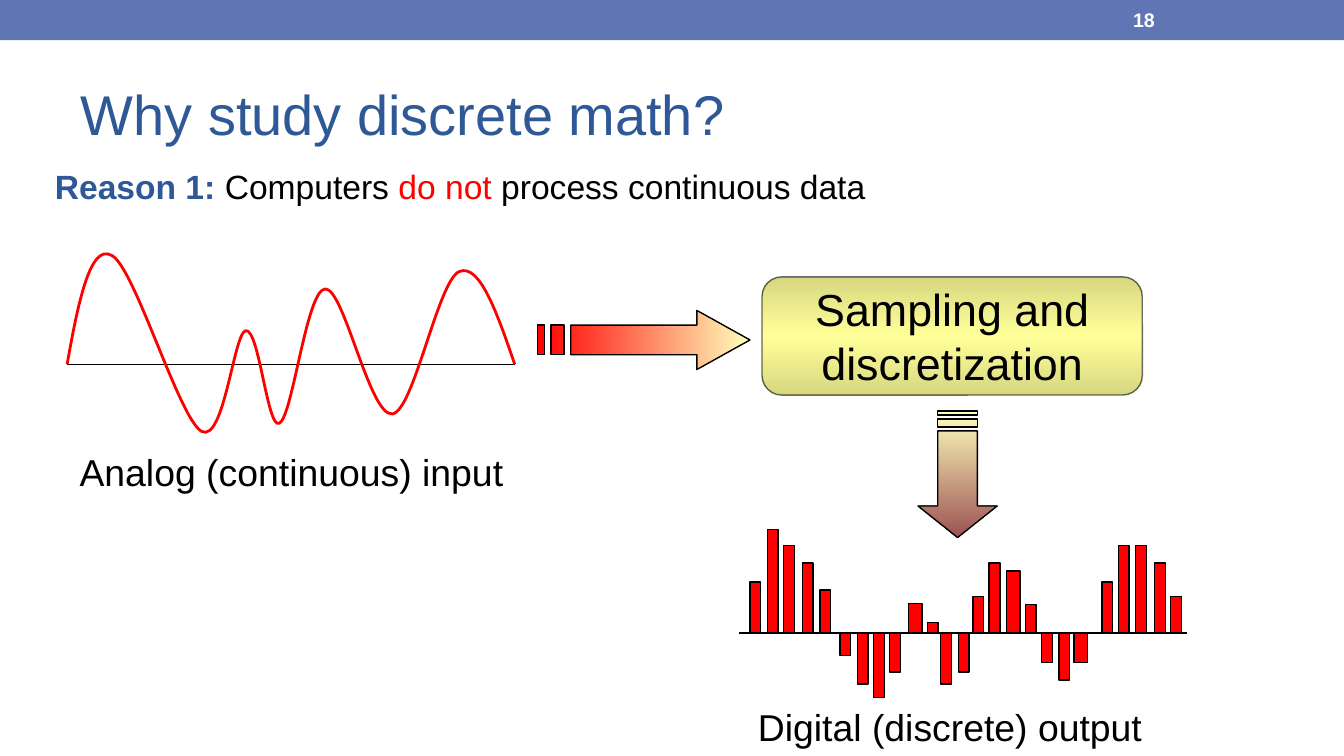
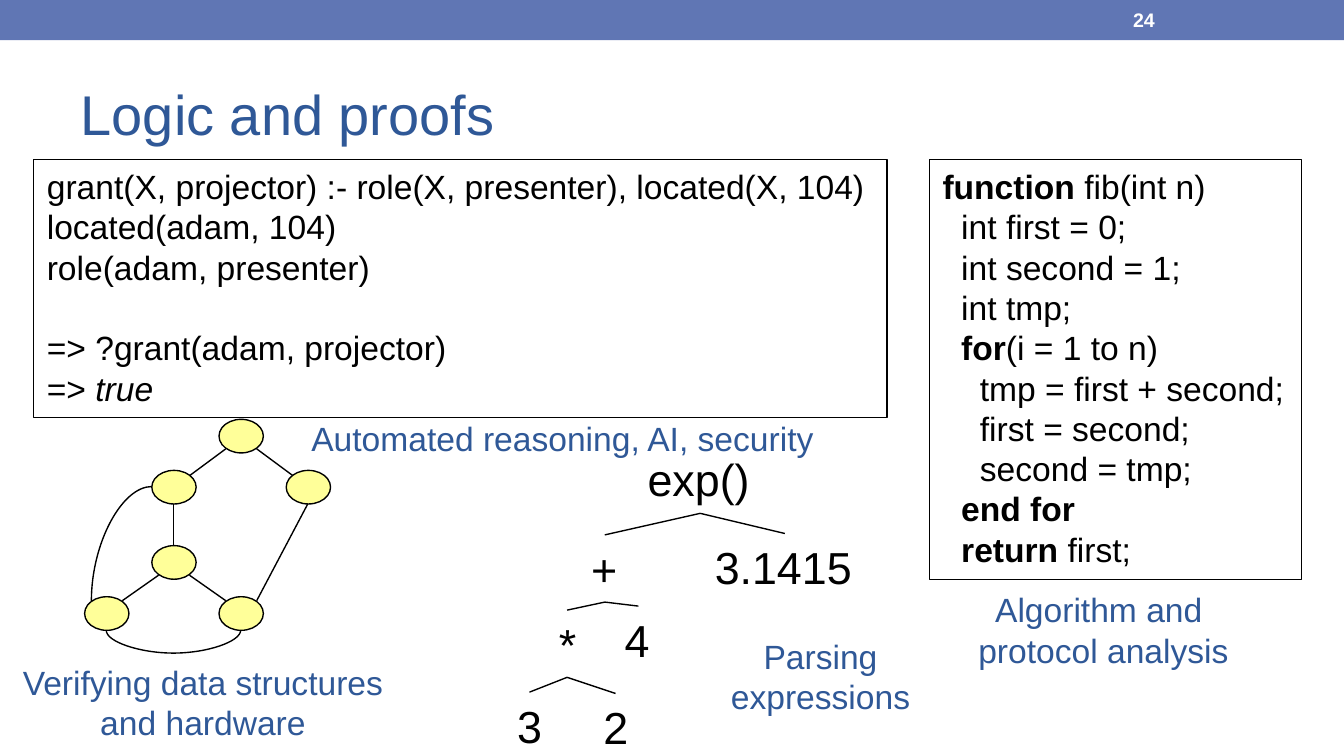
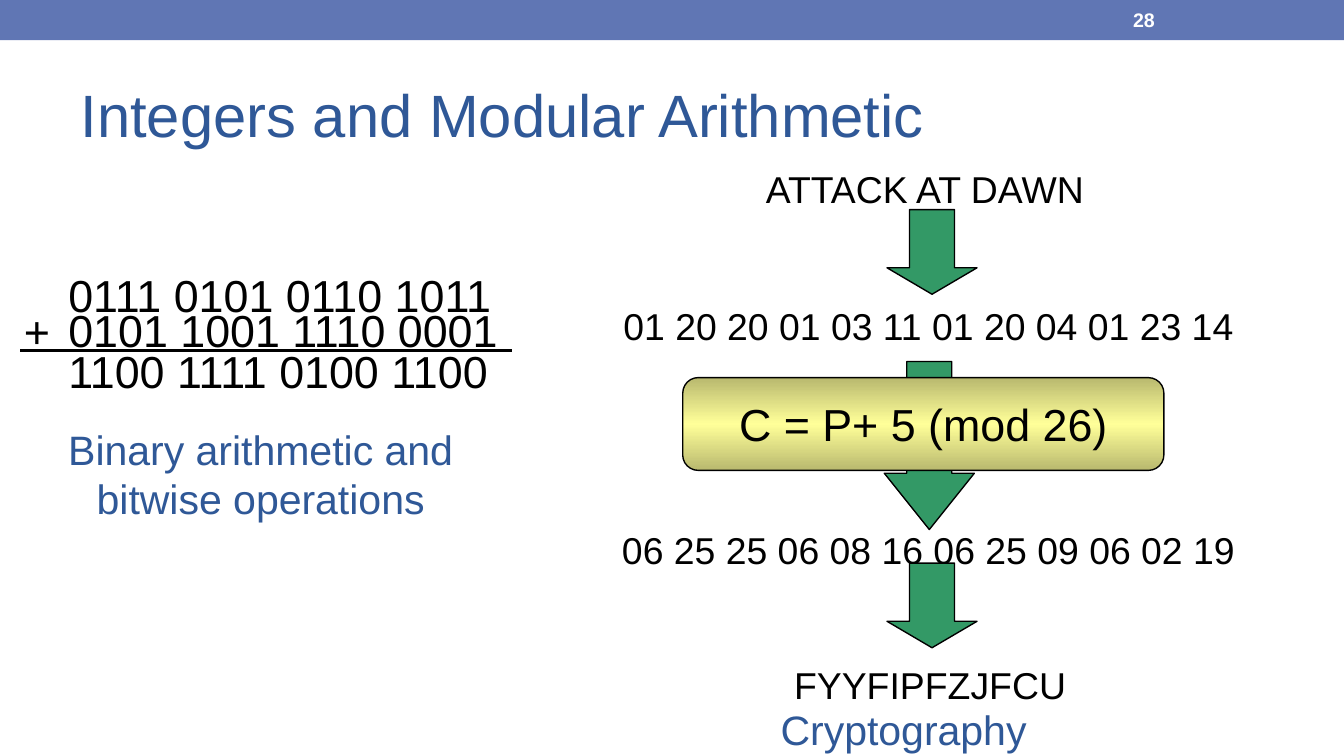
import collections

import lxml.etree
import pptx
import pptx.dml.color
import pptx.enum.shapes
import pptx.enum.text
import pptx.oxml.ns
import pptx.util

RGB = pptx.dml.color.RGBColor
SHAPES = pptx.enum.shapes.MSO_SHAPE
LINKS = pptx.enum.shapes.MSO_CONNECTOR
ALIGN = pptx.enum.text.PP_ALIGN
ANCHOR = pptx.enum.text.MSO_ANCHOR
FIT = pptx.enum.text.MSO_AUTO_SIZE
qn = pptx.oxml.ns.qn

# Shared look
BLUE = RGB(0x2F, 0x58, 0x97)
BAND = RGB(0x60, 0x76, 0xB4)
BLACK = RGB(0, 0, 0)
WHITE = RGB(255, 255, 255)
RED = RGB(255, 0, 0)
GREEN = RGB(0x33, 0x99, 0x66)
YELLOW = RGB(0xFF, 0xFF, 0x99)
CREAM = RGB(0xFF, 0xFF, 0xBD)
BROWN = RGB(0x9C, 0x52, 0x52)
OLIVE = RGB(0xD7, 0xD7, 0x81)
DARK_OLIVE = RGB(0xB9, 0xB9, 0x6F)
FONT = "Arial"
THIN = 0.75

# Square grid: ten columns or rows to the inch, on a 16:9 slide
COLUMNS, ROWS = 100, 56.25
CODE_INDENT = 1.39

Para = collections.namedtuple("Para", "spans indent first before", defaults=(0, 0, 0))


def grid(count):
    return pptx.util.Emu(round(count * pptx.util.Inches(0.1)))


def apply(target, values):
    for name, value in values.items():
        setattr(target, name, value)


# Text
def write(frame, paras, size, color=BLACK, align=ALIGN.LEFT, **frame_format):
    apply(frame, {"word_wrap": False, "vertical_anchor": ANCHOR.TOP, **frame_format})
    for number, item in enumerate(paras):
        item = item if isinstance(item, Para) else Para([item])
        para = frame.add_paragraph() if number else frame.paragraphs[0]
        apply(para, {"alignment": align, "space_before": pptx.util.Pt(item.before)})
        if item.indent:
            properties = para._p.get_or_add_pPr()
            properties.set("marL", str(grid(item.indent)))
            properties.set("indent", str(grid(item.first)))
        for part in item.spans:
            words, changes = (part, {}) if isinstance(part, str) else part
            changes = dict(changes)
            span = para.add_run()
            span.text = words
            span.font.color.rgb = changes.pop("color", color)
            apply(span.font, {"name": FONT, "size": pptx.util.Pt(size),
                              "bold": False, **changes})


def label(page, frame, paras, size, color=BLACK, align=ALIGN.LEFT, **frame_format):
    box = page.shapes.add_textbox(*map(grid, frame))
    settings = {"auto_size": FIT.SHAPE_TO_FIT_TEXT, **frame_format}
    write(box.text_frame, paras, size, color, align, **settings)


def caption(page, frame, paras, size=18):
    label(page, frame, paras, size, BLUE, ALIGN.CENTER)


# Shapes
def finish(shape, fill=None, line=BLACK, width=THIN):
    shape.shadow.inherit = False
    if fill is None:
        shape.fill.background()
    else:
        shape.fill.solid()
        shape.fill.fore_color.rgb = fill
    if line is None:
        shape.line.fill.background()
    else:
        shape.line.color.rgb = line
        shape.line.width = pptx.util.Pt(width)
    return shape


def draw(page, kind, frame, fill=None, line=BLACK, adjust=()):
    shape = page.shapes.add_shape(kind, *map(grid, frame))
    for number, value in enumerate(adjust):
        shape.adjustments[number] = value
    return finish(shape, fill, line)


def shade(shape, colors, angle):
    shape.fill.gradient()
    shape.fill.gradient_angle = -angle % 360
    stops = shape.element.spPr.find(".//" + qn("a:gsLst"))
    for stop in list(stops):
        stops.remove(stop)
    for number, color in enumerate(colors):
        position = round(100000 * number / (len(colors) - 1))
        stop = lxml.etree.SubElement(stops, qn("a:gs"), pos=str(position))
        lxml.etree.SubElement(stop, qn("a:srgbClr"), val=str(color))


def process_box(page, frame, paras, edge):
    box = draw(page, SHAPES.ROUNDED_RECTANGLE, frame, YELLOW, adjust=[0.167])
    shade(box, [edge, YELLOW, edge], 90)
    write(box.text_frame, paras, 24, align=ALIGN.CENTER, vertical_anchor=ANCHOR.MIDDLE)
    return box


def code_box(page, frame, paras, fill=None):
    box = draw(page, SHAPES.RECTANGLE, frame, fill)
    write(box.text_frame, paras, 18, auto_size=FIT.SHAPE_TO_FIT_TEXT)


def outline(page, contours, close=True):
    contours = [[(grid(x), grid(y)) for x, y in contour] for contour in contours]
    builder = page.shapes.build_freeform(*contours[0][0], scale=1.0)
    for number, contour in enumerate(contours):
        if number:
            builder.move_to(*contour[0])
        builder.add_line_segments(contour[1:], close=close)
    return finish(builder.convert_to_shape())


def striped_arrow(page, frame, colors, down=False):
    left, top, width, height = frame
    contours = [[(3/4, 0), (3/4, 1/4), (5/32, 1/4), (5/32, 3/4), (3/4, 3/4), (3/4, 1), (1, 1/2)]]
    for start, end in ((1/16, 1/8), (0, 1/32)):
        contours.append([(start, 1/4), (start, 3/4), (end, 3/4), (end, 1/4)])
    if down:
        contours = [[(across, along) for along, across in contour] for contour in contours]
    arrow = outline(page, [[(left + x * width, top + y * height) for x, y in contour]
                           for contour in contours])
    shade(arrow, colors, 90 if down else 0)


def wave(page, points):
    curve = finish(outline(page, [points], close=False), line=RED, width=1.5)
    track = curve.element.spPr.find(".//" + qn("a:path"))
    corners = track.findall(qn("a:lnTo"))
    for first in range(0, len(corners), 3):
        bend = lxml.etree.SubElement(track, qn("a:cubicBezTo"))
        for corner in corners[first:first + 3]:
            bend.append(corner[0])
            track.remove(corner)


# Connectors
def link(page, start, end, width=THIN, kind=LINKS.STRAIGHT):
    line = page.shapes.add_connector(kind, *map(grid, (*start, *end)))
    line.line.color.rgb = BLACK
    line.line.width = pptx.util.Pt(width)
    lxml.etree.SubElement(line.element.spPr, qn("a:effectLst"))
    return line


def curved_link(page, frame, turn, preset, bend=None):
    left, top, width, height = frame
    line = link(page, (left, top), (left + width, top + height), kind=LINKS.CURVE)
    properties = line.element.spPr
    properties.find(qn("a:xfrm")).set("rot", str(turn * 60000))
    geometry = properties.find(qn("a:prstGeom"))
    geometry.set("prst", preset)
    if bend:
        lxml.etree.SubElement(geometry.find(qn("a:avLst")), qn("a:gd"),
                              name="adj1", fmla=f"val {bend * 100000}")


# Page frame
def add_page(deck, title, number, size=30):
    page = deck.slides.add_slide(deck.slide_layouts[5])
    box = page.shapes.title
    apply(box, dict(zip(("left", "top", "width", "height"), map(grid, (5, 4.4, 90, 8.1)))))
    write(box.text_frame, [title], size, BLUE, word_wrap=True,
          vertical_anchor=ANCHOR.MIDDLE, auto_size=FIT.NONE)
    label(page, (83.33, 0.1, 11.67, 2.7), [Para([(number, {"bold": True})])], 10.5, WHITE,
          word_wrap=True, vertical_anchor=ANCHOR.MIDDLE, auto_size=FIT.NONE)
    return page


def add_band(deck, page):
    band = draw(page, SHAPES.RECTANGLE, (0, 0, COLUMNS, 3), BAND, None)
    deck.slide_master.shapes._spTree.insert(2, band.element)


def sampling_page(deck):
    page = add_page(deck, "Why study discrete math?", "18")
    add_band(deck, page)
    reason = [("Reason 1: ", {"bold": True, "color": BLUE}), "Computers ",
              ("do not ", {"color": RED}), "process continuous data"]
    label(page, (1.7, 11.85, 96.3, 5.6), [Para(reason, 5, -3.6, 3.6)], 18,
          word_wrap=True, auto_size=FIT.NONE)

    # Analog signal
    link(page, (5, 27.1), (38.3, 27.1))
    wave(page, [(5, 27.1), (5.8, 22.6), (6.7, 18.1), (8.3, 19), (10, 19.8), (13.3, 31.1),
                (15, 32.1), (16.7, 33), (17.4, 24.7), (18.3, 24.6), (19.3, 24.5),
                (19.9, 32), (20.8, 31.5), (21.8, 30.9), (22.8, 21.6), (24.2, 21.5),
                (25.6, 21.4), (27.5, 31), (29.2, 30.8), (30.8, 30.6), (32.6, 20.8),
                (34.2, 20.2), (35.7, 19.6), (37, 23.3), (38.3, 27.1)])
    label(page, (4.8, 32.9, 33.8, 4.4), ["Analog (continuous) input"], 20, align=ALIGN.CENTER)

    # Digital samples: left edge and signed height
    axis = 47.1
    link(page, (55, axis), (88.3, axis))
    samples = [(55.8, 3.8), (57.1, 7.7), (58.3, 6.5), (59.7, 5.2), (61, 3.2),
               (62.5, -1.7), (63.8, -3.8), (65, -4.8), (66.2, -2.9), (67.6, 2.2),
               (69, 0.8), (70, -3.8), (71.3, -2.9), (72.4, 2.7), (73.6, 5.2),
               (74.9, 4.6), (76.3, 2.1), (77.5, -2.2), (78.8, -3.5), (79.9, -2.2),
               (82, 3.8), (83.2, 6.5), (84.5, 6.5), (85.9, 5.2), (87.1, 2.7)]
    wide = (67.6, 74.9, 79.9)
    for left, height in samples:
        draw(page, SHAPES.RECTANGLE, (left, axis - max(height, 0),
                                      1 if left in wide else 0.8, abs(height)), RED)
    label(page, (55.3, 51.9, 30.8, 4.4), ["Digital (discrete) output"], 20, align=ALIGN.CENTER)

    # Conversion
    box = process_box(page, (56.7, 20.6, 28.3, 8.8), ["Sampling and", "discretization"], OLIVE)
    ink = box.element.spPr.find(qn("a:ln")).find(".//" + qn("a:srgbClr"))
    lxml.etree.SubElement(ink, qn("a:alpha"), val="59000")
    striped_arrow(page, (40, 23.1, 15.8, 4.4), [RED, CREAM])
    striped_arrow(page, (68.3, 30.6, 5.9, 9.4), [CREAM, BROWN], down=True)


def logic_page(deck):
    page = add_page(deck, "Logic and proofs", "24")
    bold, italic = {"bold": True}, {"italic": True}

    # Algorithm
    code = [(0, [("function", bold), " fib(int n)"]), (1, ["int first = 0;"]),
            (1, ["int second = 1;"]), (1, ["int tmp;"]), (1, [("for", bold), "(i = 1 to n)"]),
            (2, ["tmp = first + second;"]), (2, ["first = second;"]), (2, ["second = tmp;"]),
            (1, [("end for", bold)]), (1, [("return", bold), " first;"])]
    code_box(page, (69.15, 11.85, 27.7, 31.3),
             [Para(spans, level * CODE_INDENT) for level, spans in code], WHITE)
    caption(page, (71.7, 43.35, 20.8, 7.1), ["Algorithm and ", "protocol analysis"])

    # Reasoning
    code_box(page, (2.5, 11.85, 63.5, 19.2),
             ["grant(X, projector) :- role(X, presenter), located(X, 104)",
              "located(adam, 104)", "role(adam, presenter)",
              Para(["=> ?grant(adam, projector)"], before=21.6),
              Para(["=> ", ("true", italic)])])
    caption(page, (21.9, 30.6, 39.9, 4), ["Automated reasoning, AI, security"])

    # Graph
    for left, top in ((16.3, 31.2), (11.3, 35), (21.3, 35), (11.3, 40.6), (6.3, 44.4), (16.3, 44.4)):
        draw(page, SHAPES.OVAL, (left, top, 3.3, 2.5), YELLOW)
    edges = [((16.8, 33.4), (14.1, 35.4)), ((19.1, 33.4), (21.8, 35.4)),
             ((12.9, 37.5), (12.9, 40.6)), ((14.1, 42.8), (16.8, 44.7)),
             ((11.8, 42.8), (9.1, 44.7)), ((22.9, 37.5), (19.1, 44.7))]
    for start, end in edges:
        link(page, start, end)
    curved_link(page, (4.8, 38.2, 8.5, 4.5), 270, "curvedConnector2")
    curved_link(page, (12.9, 41.9, 1.9 / 144, 10), 90, "curvedConnector3", 144)
    caption(page, (0.5, 48.75, 29.2, 7.1), ["Verifying data structures", "and hardware"])

    # Expression tree
    terms = [("+", 43, 39.8, 4), ("*", 40.6, 45.4, 3.3), ("4", 45.5, 45.1, 3.9),
             ("3", 37.5, 51.5, 3.9), ("2", 43.9, 51.6, 3.9),
             ("exp()", 47.2, 33.1, 9.7), ("3.1415", 52.2, 39.7, 12.3)]
    for term, left, top, width in terms:
        label(page, (left, top, width, 5.1), [term], 24)
    forks = [((45, 44.8), (42.2, 45.4), (47.5, 45.1)),
             ((42.2, 50.4), (39.4, 51.5), (45.8, 51.6)),
             ((52.1, 38.2), (45, 39.8), (58.4, 39.7))]
    for parent, *children in forks:
        for child in children:
            link(page, parent, child)
    caption(page, (53.3, 46.8, 15.5, 7.1), ["Parsing", "expressions"])


def arithmetic_page(deck):
    page = add_page(deck, "Integers and Modular Arithmetic", "28", 32)

    # Binary sum
    for top, digits in ((19.4, "0111 0101 0110 1011"), (22, "0101 1001 1110 0001"),
                        (25.1, "1100 1111 0100 1100")):
        label(page, (4.1, top, 34.8, 5.1), [digits], 24)
    link(page, (1.5, 26.1), (38.1, 26.1), 1.5)
    label(page, (0.8, 22.1, 4, 5.1), ["+"], 24)
    caption(page, (3.9, 31.1, 31, 8.4), ["Binary arithmetic and", "bitwise operations"], 22)

    # Cipher
    messages = [("ATTACK AT DAWN", 56, 11.9, 26.8),
                ("01 20 20 01 03 11 01 20 04 01 23 14", 45.4, 22.1, 48),
                ("06 25 25 06 08 16 06 25 09 06 02 19", 45.3, 38.7, 48),
                ("FYYFIPFZJFCU", 58.1, 48.8, 22.5)]
    for message, left, top, width in messages:
        label(page, (left, top, width, 4.4), [message], 20)
    for left, top, height, head in ((66, 15.6, 6.3, 0.312), (66, 41.9, 6.3, 0.312),
                                    (65.8, 26.9, 12.5, 0.625)):
        draw(page, SHAPES.DOWN_ARROW, (left, top, 6.7, height), GREEN, adjust=[0.5, head])
    process_box(page, (50.8, 28.1, 35.8, 6.9), ["C = P+ 5 (mod 26)"], DARK_OLIVE)
    label(page, (57.1, 51.9, 20.6, 4.7), ["Cryptography"], 22, BLUE)


def main():
    deck = pptx.Presentation()
    apply(deck, {"slide_width": grid(COLUMNS), "slide_height": grid(ROWS)})
    sampling_page(deck)
    logic_page(deck)
    arithmetic_page(deck)
    deck.save("out.pptx")


if __name__ == "__main__":
    main()
